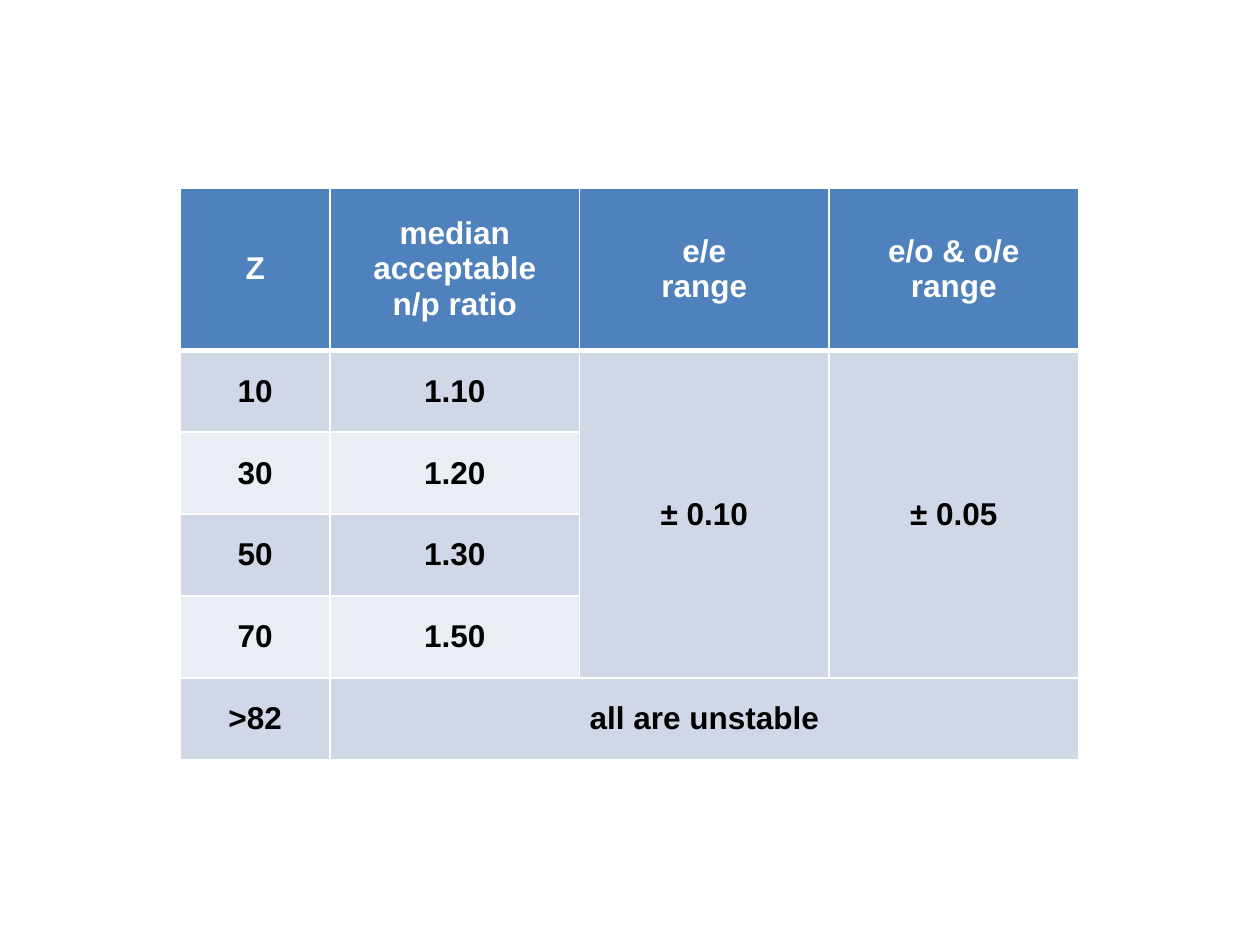
from lxml import etree
from pptx import Presentation
from pptx.dml.color import RGBColor
from pptx.enum import text
from pptx.oxml import ns
from pptx.util import Inches, Pt

COLORS = {
    "header": "4F81BD",
    "band_dark": "D0D8E8",
    "band_light": "E9EDF4",
    "border": "FFFFFF",
    "header_text": "FFFFFF",
    "body_text": "000000",
}
FONT = {"name": "Arial", "size": Pt(18), "bold": True}
COLUMN_WIDTHS = [1.19, 1.98, 1.98, 1.98]
HEADER_HEIGHT, BODY_HEIGHT = 1.29, 0.65
ROWS = [
    ["Z", "median\nacceptable\nn/p ratio", "e/e\nrange", "e/o & o/e\nrange"],
    ["10", "1.10", "± 0.10", "± 0.05"],
    ["30", "1.20", "", ""],
    ["50", "1.30", "", ""],
    ["70", "1.50", "", ""],
    [">82", "all are unstable", "", ""],
]
MERGES = [((1, 2), (4, 2)), ((1, 3), (4, 3)), ((5, 1), (5, 3))]


def set_borders(cell, widths):
    """Draw the cell's edges; widths maps L, R, T, B to points."""
    properties = cell._tc.get_or_add_tcPr()
    for position, (side, width) in enumerate(widths.items()):
        line = etree.Element(ns.qn(f"a:ln{side}"), w=str(Pt(width)))
        fill = etree.SubElement(line, ns.qn("a:solidFill"))
        etree.SubElement(fill, ns.qn("a:srgbClr"), val=COLORS["border"])
        properties.insert(position, line)


def fill_cell(cell, wording, fill, ink):
    cell.fill.solid()
    cell.fill.fore_color.rgb = RGBColor.from_string(COLORS[fill])
    cell.vertical_anchor = text.MSO_ANCHOR.MIDDLE
    cell.text = wording
    for paragraph in cell.text_frame.paragraphs:
        paragraph.alignment = text.PP_ALIGN.CENTER
        for name, value in FONT.items():
            setattr(paragraph.font, name, value)
        paragraph.font.color.rgb = RGBColor.from_string(COLORS[ink])
        for run in paragraph.runs:
            for name, value in FONT.items():
                setattr(run.font, name, value)
            run.font.color.rgb = RGBColor.from_string(COLORS[ink])


def row_style(row):
    """Return fill, text colour and border widths of a table row."""
    borders = {"L": 1, "R": 1, "T": 3 if row == 1 else 1, "B": 3 if row == 0 else 1}
    if row == 0:
        return "header", "header_text", borders
    return "band_dark" if row % 2 else "band_light", "body_text", borders


def add_stability_table(slide):
    heights = [HEADER_HEIGHT] + [BODY_HEIGHT] * (len(ROWS) - 1)
    table = slide.shapes.add_table(
        len(ROWS), len(COLUMN_WIDTHS), Inches(1.43), Inches(1.49),
        Inches(sum(COLUMN_WIDTHS)), Inches(sum(heights)),
    ).table
    for column, width in zip(table.columns, COLUMN_WIDTHS):
        column.width = Inches(width)
    for row, (height, wordings) in enumerate(zip(heights, ROWS)):
        table.rows[row].height = Inches(height)
        fill, ink, borders = row_style(row)
        for column, wording in enumerate(wordings):
            cell = table.cell(row, column)
            fill_cell(cell, wording, fill, ink)
            set_borders(cell, borders)
    for first, last in MERGES:
        table.cell(*first).merge(table.cell(*last))


def main():
    deck = Presentation()
    deck.slide_width, deck.slide_height = Inches(10), Inches(7.5)
    slide = deck.slides.add_slide(deck.slide_layouts.get_by_name("Blank"))
    add_stability_table(slide)
    deck.save("out.pptx")


if __name__ == "__main__":
    main()
